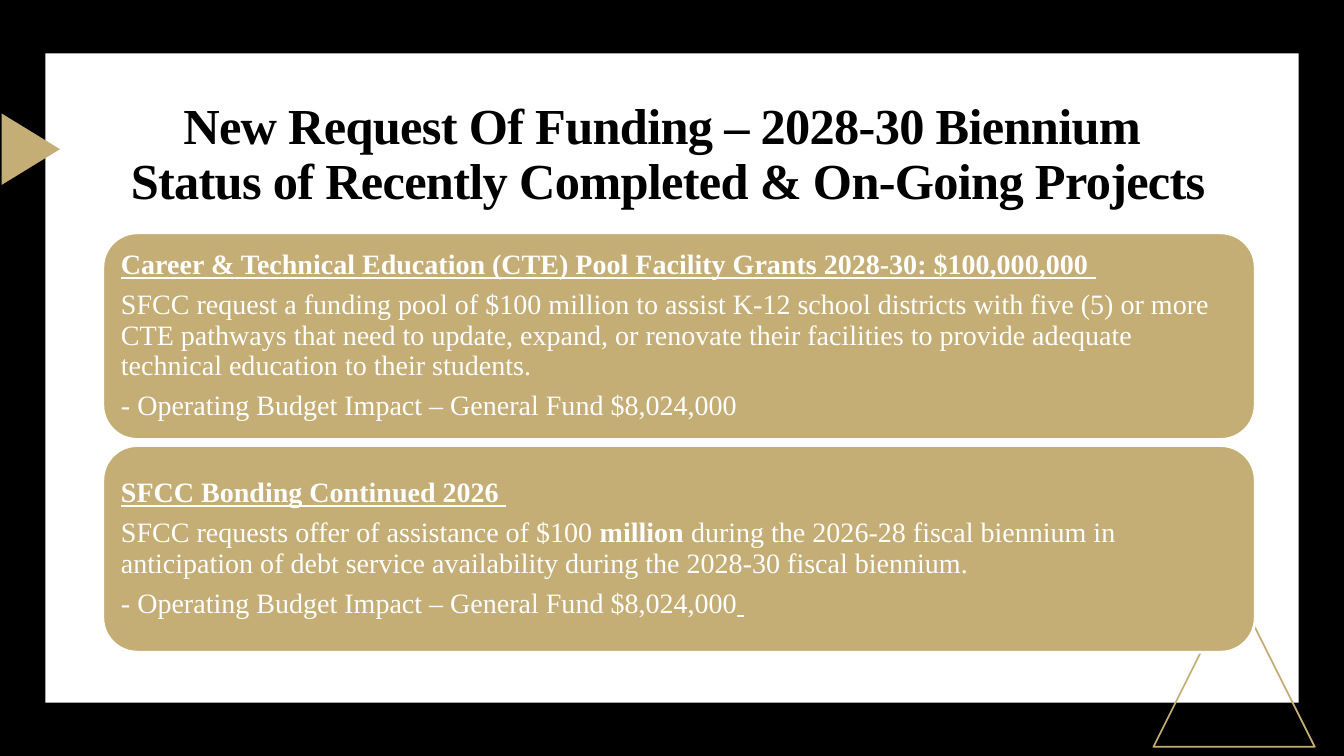
from dataclasses import dataclass
from typing import Optional

from pptx import Presentation
from pptx import util as u
from pptx.dml.color import RGBColor
from pptx.enum import shapes, text

BLACK = RGBColor(0x00, 0x00, 0x00)
WHITE = RGBColor(0xFF, 0xFF, 0xFF)
GOLD = RGBColor(0xC4, 0xAE, 0x75)
FONT = "Times New Roman"
CARD_TOP, CARD_HEIGHT, CARD_PITCH = 2.31, 2.05, 2.11


@dataclass(frozen=True)
class Run:
    words: str
    bold: bool = False
    underline: bool = False


@dataclass(frozen=True)
class Outline:
    color: RGBColor
    width: float


def heading(words: str) -> list[Run]:
    return [Run(words, bold=True, underline=True)]


IMPACT = Run("- Operating Budget Impact – General Fund $8,024,000")
REQUESTS = [
    [
        heading("Career & Technical Education (CTE) Pool Facility Grants 2028-30: $100,000,000 "),
        [Run("SFCC request a funding pool of $100 million to assist K-12 school districts "
             "with five (5) or more CTE pathways that need to update, expand, or renovate "
             "their facilities to provide adequate technical education to their students.")],
        [IMPACT],
    ],
    [
        heading("SFCC Bonding Continued 2026 "),
        [Run("SFCC requests offer of assistance of $100"),
         Run(" million ", bold=True),
         Run("during the 2026-28 fiscal biennium in anticipation of debt service "
             "availability during the 2028-30 fiscal biennium.")],
        [IMPACT, Run(" ", bold=True, underline=True)],
    ],
]


def add_panel(slide, kind, left: float, top: float, width: float, height: float,
              fill: Optional[RGBColor] = None, outline: Optional[Outline] = None,
              rotation: float = 0):
    panel = slide.shapes.add_shape(kind, u.Inches(left), u.Inches(top),
                                   u.Inches(width), u.Inches(height))
    panel.shadow.inherit = False
    panel.rotation = rotation
    if fill is None:
        panel.fill.background()
    else:
        panel.fill.solid()
        panel.fill.fore_color.rgb = fill
    if outline is None:
        panel.line.fill.background()
    else:
        panel.line.color.rgb = outline.color
        panel.line.width = u.Pt(outline.width)
    return panel


def write(frame, paragraphs: list[list[Run]], *, size: float, color: RGBColor,
          align, after: float = 0, inset: float = 0.1, tracking: float = 0) -> None:
    frame.word_wrap = True
    frame.auto_size = text.MSO_AUTO_SIZE.NONE
    frame.vertical_anchor = text.MSO_ANCHOR.MIDDLE
    frame.margin_left = frame.margin_right = u.Inches(inset)
    frame.margin_top = frame.margin_bottom = u.Inches(min(inset, 0.08))
    for index, runs in enumerate(paragraphs):
        line = frame.add_paragraph() if index else frame.paragraphs[0]
        line.alignment = align
        line.line_spacing = 0.9
        line.space_before = u.Pt(0)
        line.space_after = u.Pt(after)
        for number, part in enumerate(runs):
            if number and part.words.startswith("Status"):
                line.add_line_break()
            run = line.add_run()
            run.text = part.words
            run.font.name = FONT
            run.font.size = u.Pt(size)
            run.font.color.rgb = color
            run.font.bold = part.bold
            run.font.underline = part.underline
            if tracking:
                run.font._element.set("spc", str(round(tracking * 100)))


def add_title(slide) -> None:
    title = slide.shapes.title
    slide.shapes._spTree.append(title._element)
    title.left, title.top = u.Inches(1.02), u.Inches(1.2)
    title.width, title.height = u.Inches(11.21), u.Inches(0.69)
    write(title.text_frame,
          [[Run("New Request Of Funding – 2028-30 Biennium ", bold=True),
            Run("Status of Recently Completed & On-Going Projects", bold=True)]],
          size=36, color=BLACK, align=text.PP_ALIGN.CENTER, tracking=-0.5)


def main() -> None:
    deck = Presentation()
    deck.slide_width, deck.slide_height = u.Inches(13.33), u.Inches(7.5)
    slide = deck.slides.add_slide(deck.slide_layouts[5])
    slide.background.fill.solid()
    slide.background.fill.fore_color.rgb = BLACK

    kinds = shapes.MSO_SHAPE
    add_panel(slide, kinds.RECTANGLE, 0.45, 0.53, 12.43, 6.44, fill=WHITE)
    add_panel(slide, kinds.ISOSCELES_TRIANGLE, 11.44, 5.81, 1.6, 1.6,
              outline=Outline(GOLD, 1.25))
    add_panel(slide, kinds.ISOSCELES_TRIANGLE, -0.05, 1.19, 0.71, 0.58,
              fill=GOLD, rotation=90)
    add_title(slide)

    for index, request in enumerate(REQUESTS):
        card = add_panel(slide, kinds.ROUNDED_RECTANGLE, 1.02,
                         CARD_TOP + index * CARD_PITCH, 11.43, CARD_HEIGHT,
                         fill=GOLD, outline=Outline(WHITE, 2))
        write(card.text_frame, request, size=20, color=WHITE,
              align=text.PP_ALIGN.LEFT, after=7, inset=0.08)

    deck.save("out.pptx")


if __name__ == "__main__":
    main()
